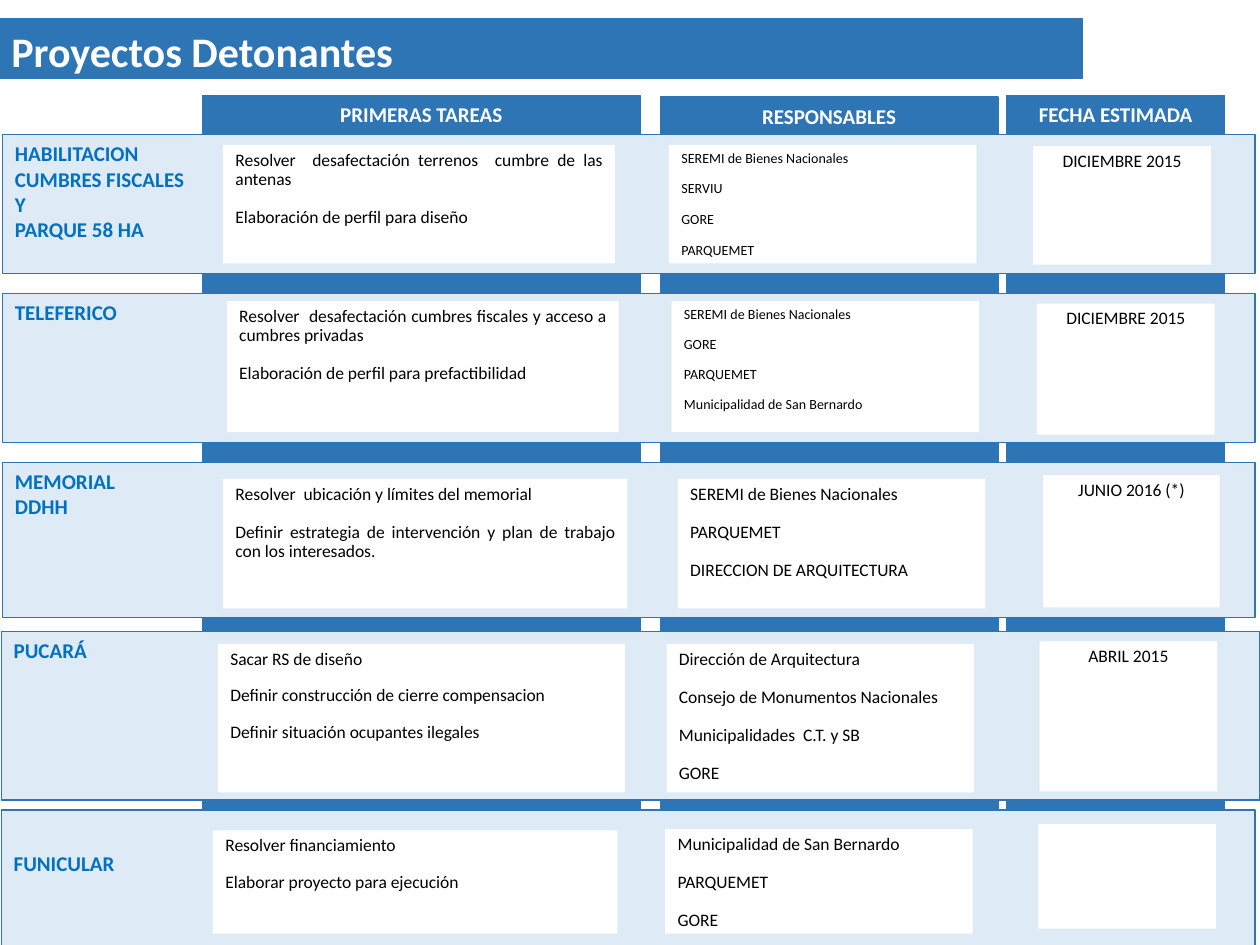
"""Build the slide of trigger projects with their tasks, owners and dates."""
from pptx import Presentation
from pptx.dml.color import RGBColor
from pptx.enum.shapes import MSO_SHAPE
from pptx.enum.text import MSO_ANCHOR, MSO_AUTO_SIZE, PP_ALIGN
from pptx.util import Inches, Pt

BLUE = RGBColor(0x2E, 0x75, 0xB6)
PALE = RGBColor(0xDE, 0xEB, 0xF7)
LABEL = RGBColor(0x00, 0x70, 0xC0)
WHITE = RGBColor(0xFF, 0xFF, 0xFF)
BLACK = RGBColor(0x00, 0x00, 0x00)

deck = Presentation()
deck.slide_width, deck.slide_height = Inches(10), Inches(7.5)
CELL = deck.slide_width // 1000
page = deck.slides.add_slide(deck.slide_layouts[5])


def format_box(box, place, fill, line=None):
    """Place a box on the grid of 1000 by 750 cells and colour it."""
    for name, cells in zip(("left", "top", "width", "height"), place):
        setattr(box, name, cells * CELL)
    box.fill.solid()
    box.fill.fore_color.rgb = fill
    if line is None:
        box.line.fill.background()
    else:
        box.line.color.rgb = line
        box.line.width = Pt(0.75)
    box.shadow.inherit = False


def write(box, lines, font, align=PP_ALIGN.LEFT, spacing=1.0, gap=0, inset=5):
    """Write one paragraph per line, with a gap between paragraphs."""
    frame = box.text_frame
    layout = {
        "word_wrap": True, "auto_size": MSO_AUTO_SIZE.NONE,
        "vertical_anchor": MSO_ANCHOR.TOP,
        "margin_left": 10 * CELL, "margin_right": 10 * CELL,
        "margin_top": inset * CELL, "margin_bottom": 5 * CELL,
    }
    for name, value in layout.items():
        setattr(frame, name, value)
    for number, line in enumerate(lines):
        para = frame.add_paragraph() if number else frame.paragraphs[0]
        para.alignment, para.line_spacing = align, spacing
        para.space_before = Pt(gap if number else 0)
        span = para.add_run()
        span.text = line
        span.font.color.rgb = font["color"]
        for name in ("size", "bold"):
            setattr(span.font, name, font[name])
        span.font.name = "Calibri"


title = page.shapes.title
format_box(title, (-1, 15, 860, 47), BLUE, BLUE)
write(title, ["Proyectos Detonantes"], {"size": Pt(24), "bold": True, "color": WHITE})

HEADINGS = [
    ("FECHA ESTIMADA", (799, 76, 173, 650)),
    ("RESPONSABLES", (524, 77, 268, 649)),
    ("PRIMERAS TAREAS", (161, 76, 347, 651)),
]
for heading, place in HEADINGS:
    column = page.shapes.add_shape(MSO_SHAPE.RECTANGLE, 0, 0, 0, 0)
    format_box(column, place, BLUE, BLUE)
    write(column, [heading], {"size": Pt(12), "bold": True, "color": WHITE}, PP_ALIGN.CENTER)

PROJECTS = [
    {
        "name": ["HABILITACION", "CUMBRES FISCALES", "Y", "PARQUE 58 HA"],
        "band": (2, 107, 994, 110), "inset": 5,
        "cards": [
            ((177, 115, 311, 94), 10, 11,
             ["Resolver  desafectación terrenos  cumbre de las antenas",
              "Elaboración de perfil para diseño"]),
            ((531, 115, 244, 94), 8, 9,
             ["SEREMI de Bienes Nacionales", "SERVIU", "GORE", "PARQUEMET"]),
            ((820, 116, 141, 94), 10, 0, ["DICIEMBRE 2015"]),
        ],
    },
    {
        "name": ["TELEFERICO"],
        "band": (2, 233, 994, 118), "inset": 5,
        "cards": [
            ((180, 239, 311, 104), 10, 11,
             ["Resolver  desafectación cumbres fiscales y acceso a cumbres privadas",
              "Elaboración de perfil para prefactibilidad"]),
            ((533, 239, 244, 104), 8, 8.5,
             ["SEREMI de Bienes Nacionales", "GORE", "PARQUEMET",
              "Municipalidad de San Bernardo"]),
            ((823, 241, 141, 104), 10, 0, ["DICIEMBRE 2015"]),
        ],
    },
    {
        "name": ["MEMORIAL", "DDHH"],
        "band": (2, 367, 994, 123), "inset": 5,
        "cards": [
            ((177, 380, 321, 103), 10, 11,
             ["Resolver  ubicación y límites del memorial",
              "Definir estrategia de intervención y plan de trabajo con los interesados."]),
            ((538, 380, 244, 103), 10, 11,
             ["SEREMI de Bienes Nacionales", "PARQUEMET", "DIRECCION DE ARQUITECTURA"]),
            ((828, 377, 140, 105), 10, 0, ["JUNIO 2016 (*)"]),
        ],
    },
    {
        "name": ["PUCARÁ"],
        "band": (1, 501, 999, 134), "inset": 5,
        "cards": [
            ((173, 511, 323, 118), 10, 10,
             ["Sacar RS de diseño", "Definir construcción de cierre compensacion",
              "Definir situación ocupantes ilegales"]),
            ((529, 511, 244, 118), 10, 11,
             ["Dirección de Arquitectura", "Consejo de Monumentos Nacionales",
              "Municipalidades  C.T. y SB", "GORE"]),
            ((825, 509, 141, 119), 10, 0, ["ABRIL 2015"]),
        ],
    },
    {
        "name": ["FUNICULAR"],
        "band": (1, 643, 995, 116), "inset": 32,
        "cards": [
            ((169, 659, 321, 82), 10, 10,
             ["Resolver financiamiento", "Elaborar proyecto para ejecución"]),
            ((528, 658, 244, 83), 10, 11,
             ["Municipalidad de San Bernardo", "PARQUEMET", "GORE"]),
            ((824, 654, 141, 83), 10, 0, []),
        ],
    },
]
ALIGNMENTS = (PP_ALIGN.JUSTIFY, PP_ALIGN.JUSTIFY, PP_ALIGN.CENTER)

for project in PROJECTS:
    band = page.shapes.add_shape(MSO_SHAPE.RECTANGLE, 0, 0, 0, 0)
    format_box(band, project["band"], PALE, BLUE)
    write(band, project["name"], {"size": Pt(12), "bold": True, "color": LABEL},
          inset=project["inset"])
    for (place, size, gap, lines), align in zip(project["cards"], ALIGNMENTS):
        card = page.shapes.add_shape(MSO_SHAPE.RECTANGLE, 0, 0, 0, 0)
        format_box(card, place, WHITE)
        write(card, lines, {"size": Pt(size), "bold": False, "color": BLACK},
              align, spacing=0.9, gap=gap)

deck.save("out.pptx")
